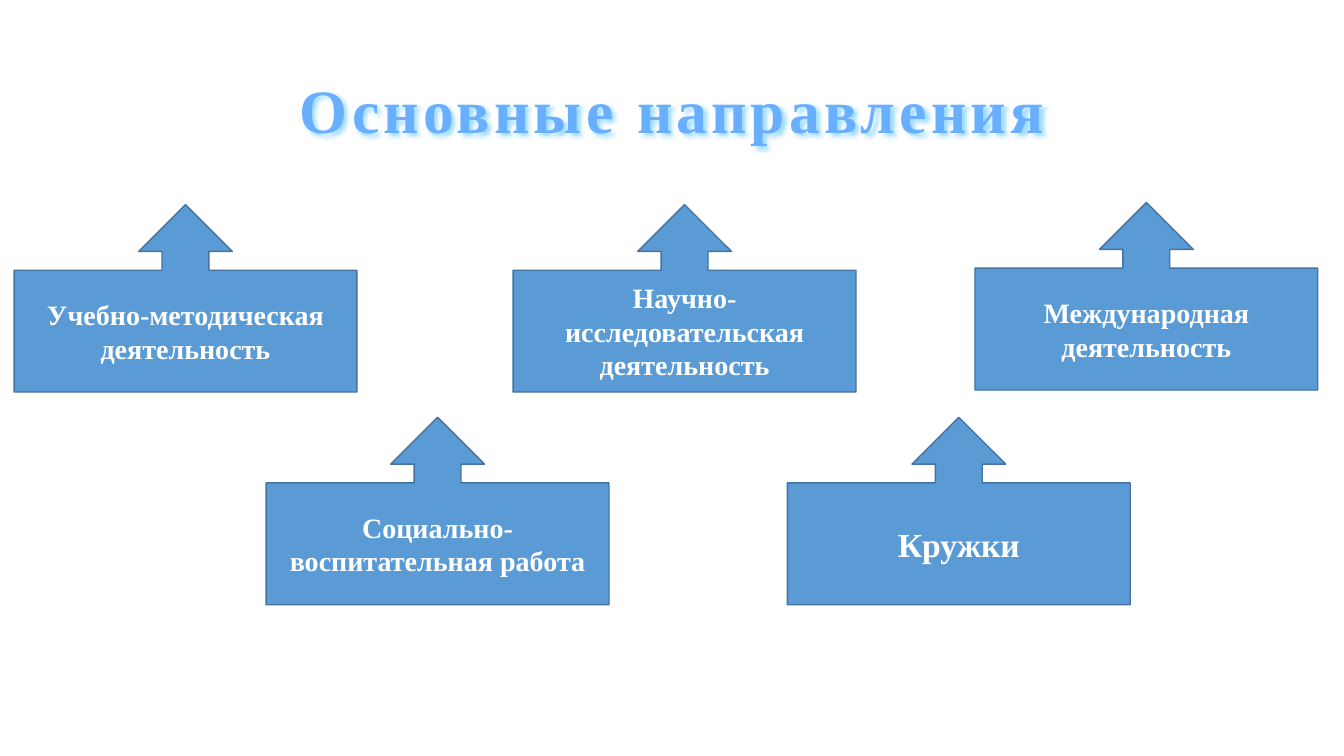
from dataclasses import dataclass

from lxml import etree
from pptx import Presentation
from pptx.dml.color import RGBColor
from pptx.enum.shapes import MSO_SHAPE as Shape
from pptx.enum.text import MSO_ANCHOR as Anchor, PP_ALIGN as Align
from pptx.oxml import parse_xml
from pptx.oxml.ns import nsdecls
from pptx.slide import Slide
from pptx.text.text import Font
from pptx.util import Inches, Pt

FONT_NAME = "Times New Roman"
WHITE = RGBColor(0xFF, 0xFF, 0xFF)
BLUE = RGBColor(0x5B, 0x9B, 0xD5)
DARK_BLUE = RGBColor(0x43, 0x73, 0x9E)
TITLE_LIGHT = RGBColor(0x69, 0xAF, 0xFF)
TITLE_DARK = RGBColor(0x2D, 0x74, 0xB4)
TITLE_OUTLINE = RGBColor(0xF5, 0xF7, 0xFB)
TITLE_SHADOW = RGBColor(0x9F, 0xDC, 0xFF)

CALLOUT_WIDTH, CALLOUT_HEIGHT = 3.4, 1.86


@dataclass(frozen=True)
class Direction:
    text: str
    left: float
    top: float
    size: int = 20


DIRECTIONS = [
    Direction("Учебно-методическая деятельность", 0.14, 2.03),
    Direction("Научно-исследовательская деятельность", 5.09, 2.03),
    Direction("Международная деятельность", 9.67, 2.01),
    Direction("Социально-воспитательная работа", 2.64, 4.14),
    Direction("Кружки", 7.81, 4.14, 24),
]


def write_text(box, text: str, size: int) -> Font:
    """Put one centred bold paragraph in the box and return its run's font."""
    frame = box.text_frame
    frame.word_wrap = True
    frame.vertical_anchor = Anchor.MIDDLE
    frame.text = text
    para = frame.paragraphs[0]
    para.alignment = Align.CENTER
    font = para.runs[0].font
    font.name, font.size, font.bold = FONT_NAME, Pt(size), True
    return font


def add_title(page: Slide, text: str) -> None:
    box = page.shapes.add_textbox(Inches(0.92), Inches(0.4), Inches(11.5), Inches(1.45))
    font = write_text(box, text, 44)
    box.text_frame.paragraphs[0].line_spacing = 0.9

    font.fill.gradient()
    font.fill.gradient_angle = 270
    stops = font.fill.gradient_stops
    for stop, position, colour in zip(stops, (0.1, 0.75), (TITLE_LIGHT, TITLE_DARK)):
        stop.position = position
        stop.color.rgb = colour

    properties = box.text_frame.paragraphs[0].runs[0]._r.get_or_add_rPr()
    properties.set("spc", "300")
    properties.insert(0, parse_xml(
        f'<a:ln {nsdecls("a")} w="{Pt(0.9)}"><a:solidFill>'
        f'<a:srgbClr val="{TITLE_OUTLINE}"/></a:solidFill></a:ln>'))
    box._element.spPr.append(parse_xml(
        f'<a:effectLst {nsdecls("a")}><a:outerShdw blurRad="{Pt(2)}" dist="{Pt(2)}" '
        f'dir="2700000" algn="tl" rotWithShape="0"><a:srgbClr val="{TITLE_SHADOW}"/>'
        f'</a:outerShdw></a:effectLst>'))


def add_callout(page: Slide, direction: Direction) -> None:
    box = page.shapes.add_shape(
        Shape.UP_ARROW_CALLOUT, Inches(direction.left), Inches(direction.top),
        Inches(CALLOUT_WIDTH), Inches(CALLOUT_HEIGHT))
    box.shadow.inherit = False
    box.fill.solid()
    box.fill.fore_color.rgb = BLUE
    box.line.color.rgb = DARK_BLUE
    box.line.width = Pt(1)
    write_text(box, direction.text, direction.size).color.rgb = WHITE


def main() -> None:
    deck = Presentation()
    deck.slide_width, deck.slide_height = Inches(13.33), Inches(7.5)
    page = deck.slides.add_slide(deck.slide_layouts[6])
    add_title(page, "Основные направления")
    for direction in DIRECTIONS:
        add_callout(page, direction)
    deck.save("out.pptx")


if __name__ == "__main__":
    main()
